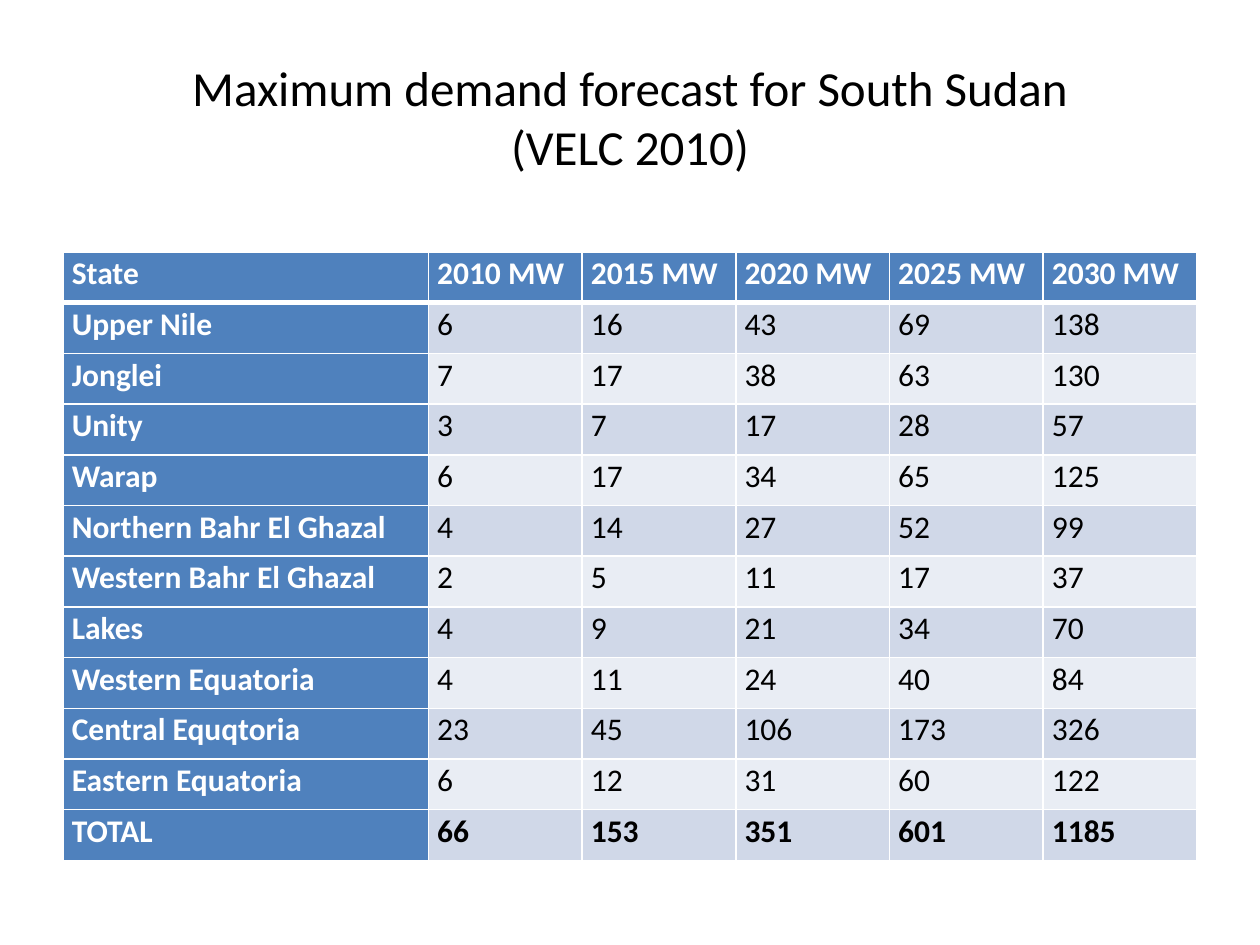
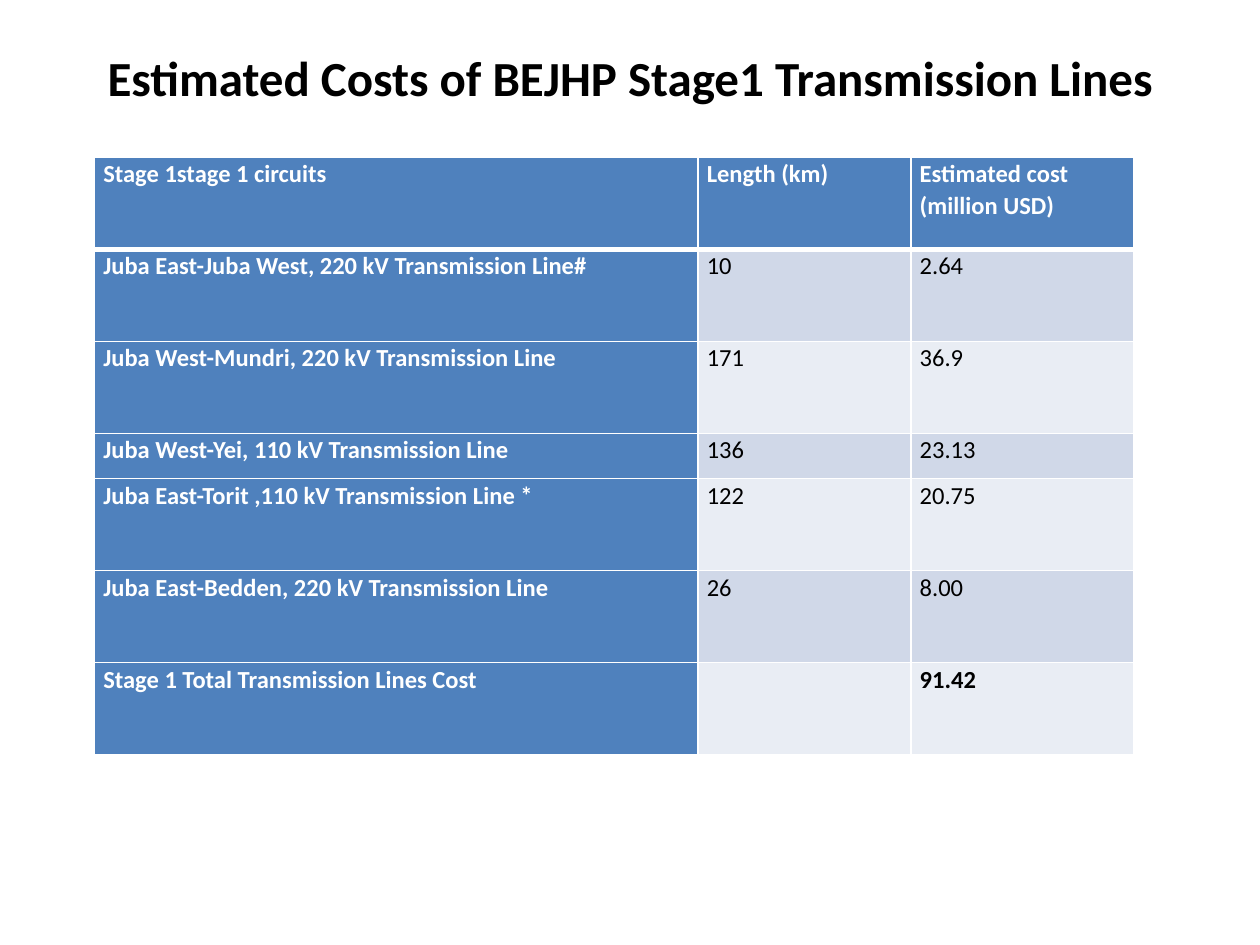
from dataclasses import dataclass

from lxml.etree import SubElement
from pptx import Presentation
from pptx.dml.color import RGBColor
from pptx.enum.text import MSO_ANCHOR as Anchor, PP_ALIGN as Align
from pptx.oxml.ns import qn
from pptx.util import Inches, Pt


@dataclass(frozen=True)
class Theme:
    font: str = "Calibri"
    dark: str = "000000"
    light: str = "FFFFFF"
    accent: str = "4F81BD"
    bands: tuple = ("D0D8E8", "E9EDF4")
    title_size: int = 28
    line_spacing: float = 1.07
    thin: int = 1
    thick: int = 3


THEME = Theme()

SLIDES = [
    {
        "title": "Maximum demand forecast for South Sudan\n(VELC 2010)",
        "title_bold": False,
        "title_height": 1.25,
        "table_at": (0.5, 2),
        "text_size": 18,
        "columns": [2.9] + [1.22] * 5,
        "heights": [4.83 / 12] * 12,
        "rows": [
            ("State", "2010 MW", "2015 MW", "2020 MW", "2025 MW", "2030 MW"),
            ("Upper Nile", 6, 16, 43, 69, 138),
            ("Jonglei", 7, 17, 38, 63, 130),
            ("Unity", 3, 7, 17, 28, 57),
            ("Warap", 6, 17, 34, 65, 125),
            ("Northern Bahr El Ghazal", 4, 14, 27, 52, 99),
            ("Western Bahr El Ghazal", 2, 5, 11, 17, 37),
            ("Lakes", 4, 9, 21, 34, 70),
            ("Western Equatoria", 4, 11, 24, 40, 84),
            ("Central Equqtoria", 23, 45, 106, 173, 326),
            ("Eastern Equatoria", 6, 12, 31, 60, 122),
            ("TOTAL", 66, 153, 351, 601, 1185),
        ],
    },
    {
        "title": "Estimated Costs of BEJHP Stage1 Transmission Lines",
        "title_bold": True,
        "title_height": 0.62,
        "table_at": (0.75, 1.25),
        "text_size": 14,
        "columns": [4.79, 1.69, 1.77],
        "heights": [0.73] * 3 + [0.36] + [0.73] * 3,
        "rows": [
            ("Stage 1stage 1 circuits", "Length (km)", "Estimated cost (million USD)"),
            ("Juba East-Juba West, 220 kV Transmission Line#", "10", "2.64"),
            ("Juba West-Mundri, 220 kV Transmission Line", "171", "36.9"),
            ("Juba West-Yei, 110 kV Transmission Line", "136", "23.13"),
            ("Juba East-Torit ,110 kV Transmission Line *", "122", "20.75"),
            ("Juba East-Bedden, 220 kV Transmission Line", "26", "8.00"),
            ("Stage 1 Total Transmission Lines Cost", "", "91.42"),
        ],
    },
]


def write(frame, text, *, size, color=THEME.dark, bold=False, align=Align.LEFT, spacing=1.0):
    para = frame.paragraphs[0]
    para.alignment = align
    para.line_spacing = spacing
    para.font.size = Pt(size)
    for index, line in enumerate(text.split("\n") if text else []):
        if index:
            para.add_line_break()
        span = para.add_run()
        span.text = line
        span.font.name = THEME.font
        span.font.size = Pt(size)
        span.font.bold = bold
        span.font.color.rgb = RGBColor.from_string(color)


def add_title(page, text, height, bold):
    box = page.shapes.add_textbox(Inches(0.5), Inches(0.3), Inches(9), Inches(height))
    box.text_frame.word_wrap = True
    box.text_frame.vertical_anchor = Anchor.MIDDLE
    write(box.text_frame, text, size=THEME.title_size, bold=bold, align=Align.CENTER)


def add_borders(cell, row):
    widths = {
        "L": THEME.thin,
        "R": THEME.thin,
        "T": THEME.thick if row == 1 else THEME.thin,
        "B": THEME.thick if row == 0 else THEME.thin,
    }
    properties = cell._tc.get_or_add_tcPr()
    for side, width in widths.items():
        line = SubElement(properties, qn(f"a:ln{side}"), w=str(Pt(width)))
        fill = SubElement(line, qn("a:solidFill"))
        SubElement(fill, qn("a:srgbClr"), val=THEME.light)


def format_cell(cell, row, column, last_row, text, size):
    heading = row == 0 or column == 0
    color = THEME.accent if heading else THEME.bands[(row - 1) % 2]
    cell.margin_left = cell.margin_right = Inches(0.07)
    cell.margin_top = cell.margin_bottom = 0
    add_borders(cell, row)
    cell.fill.solid()
    cell.fill.fore_color.rgb = RGBColor.from_string(color)
    write(
        cell.text_frame,
        text,
        size=size,
        color=THEME.light if heading else THEME.dark,
        bold=heading or row == last_row,
        spacing=THEME.line_spacing,
    )


def add_data_table(page, at, columns, heights, rows, size):
    left, top = at
    table = page.shapes.add_table(
        len(rows), len(columns), Inches(left), Inches(top),
        Inches(sum(columns)), Inches(sum(heights)),
    ).table
    for column, width in zip(table.columns, columns):
        column.width = Inches(width)
    for row, height in zip(table.rows, heights):
        row.height = Inches(height)
    for r, values in enumerate(rows):
        for c, value in enumerate(values):
            format_cell(table.cell(r, c), r, c, len(rows) - 1, str(value), size)


def main():
    deck = Presentation()
    deck.slide_width, deck.slide_height = Inches(10), Inches(7.5)
    for content in SLIDES:
        page = deck.slides.add_slide(deck.slide_layouts[6])
        add_title(page, content["title"], content["title_height"], content["title_bold"])
        add_data_table(
            page, content["table_at"], content["columns"],
            content["heights"], content["rows"], content["text_size"],
        )
    deck.save("out.pptx")


if __name__ == "__main__":
    main()
